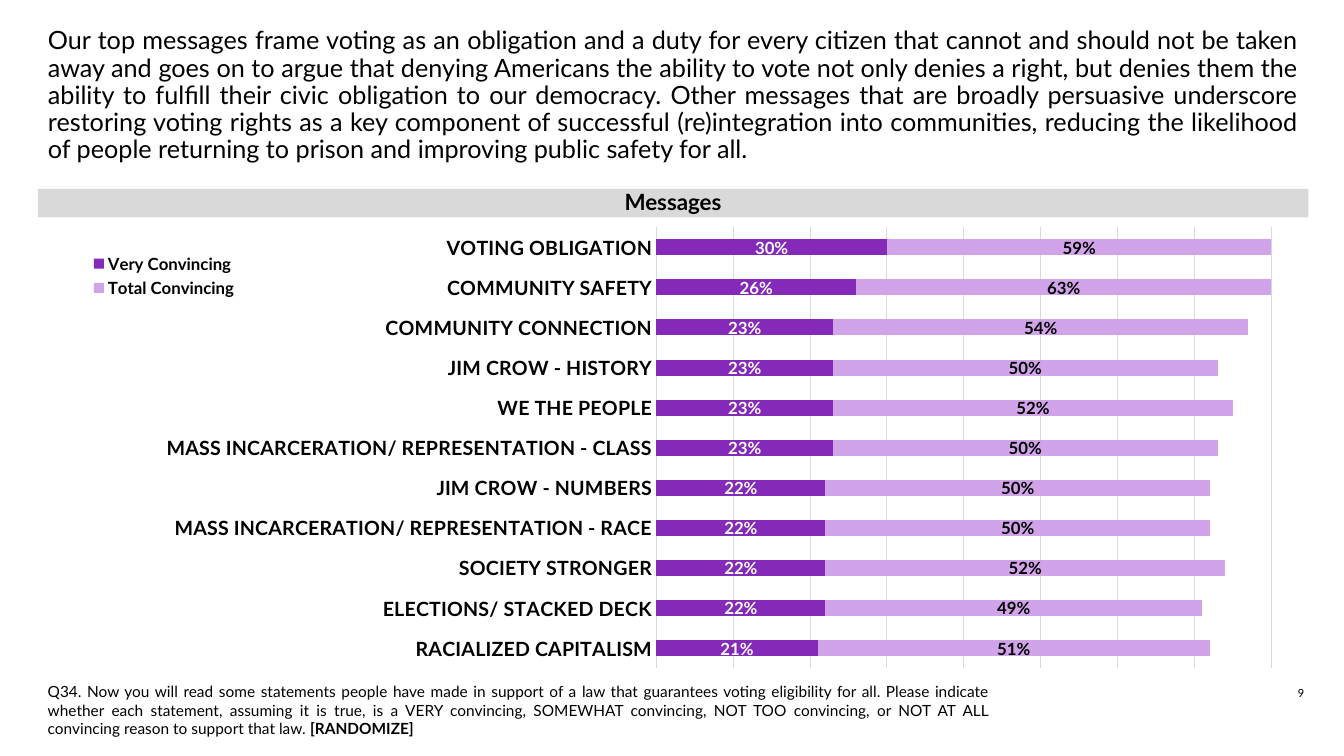
"""Build the slide on the most convincing voting-rights messages."""
from lxml import etree
from pptx import Presentation
from pptx import util as u
from pptx.chart.data import CategoryChartData
from pptx.dml.color import RGBColor
from pptx.enum import chart as ch, shapes, text
from pptx.oxml import parse_xml
from pptx.oxml.ns import nsdecls, qn

PX = 9525
COLORS = {"black": "000000", "white": "FFFFFF", "grey": "D9D9D9",
          "very": "852AB8", "total": "D1A4EA"}
TITLE = (
    "Our top messages frame voting as an obligation and a duty for every citizen "
    "that cannot and should not be taken away and goes on to argue that denying "
    "Americans the ability to vote not only denies a right, but denies them the "
    "ability to fulfill their civic obligation to our democracy. Other messages "
    "that are broadly persuasive underscore restoring voting rights as a key "
    "component of successful (re)integration into communities, reducing the "
    "likelihood of people returning to prison and improving public safety for all.")
QUESTION = (
    "Q34. Now you will read some statements people have made in support of a law "
    "that guarantees voting eligibility for all. Please indicate whether each "
    "statement, assuming it is true, is a VERY convincing, SOMEWHAT convincing, "
    "NOT TOO convincing, or NOT AT ALL convincing reason to support that law. ")
MESSAGES = [
    ("VOTING OBLIGATION", 0.30, 0.59),
    ("COMMUNITY SAFETY", 0.26, 0.63),
    ("COMMUNITY CONNECTION", 0.23, 0.54),
    ("JIM CROW - HISTORY", 0.23, 0.50),
    ("WE THE PEOPLE", 0.23, 0.52),
    ("MASS INCARCERATION/ REPRESENTATION - CLASS", 0.23, 0.50),
    ("JIM CROW - NUMBERS", 0.22, 0.50),
    ("MASS INCARCERATION/ REPRESENTATION - RACE", 0.22, 0.50),
    ("SOCIETY STRONGER", 0.22, 0.52),
    ("ELECTIONS/ STACKED DECK", 0.22, 0.49),
    ("RACIALIZED CAPITALISM", 0.21, 0.51),
]
SERIES = [("Very Convincing", "very", "white", "###0%"),
          ("Total Convincing", "total", "black", "0%")]


def px(*lengths):
    return [u.Emu(n * PX) for n in lengths]


def rgb(name):
    return RGBColor.from_string(COLORS[name])


def apply(obj, values):
    for name, value in values.items():
        setattr(obj, name, value)


def style_font(font, size, bold=False, color="black", name="Lato"):
    apply(font, {"size": u.Pt(size), "bold": bold, "name": name})
    font.color.rgb = rgb(color)


def style_line(line, color):
    line.color.rgb = rgb(color)
    line.width = u.Pt(0.75)


def write(sp, runs, size, align, anchor=text.MSO_ANCHOR.TOP, spacing=1.0, name="Lato"):
    tf = sp.text_frame
    apply(tf, {"word_wrap": True, "auto_size": text.MSO_AUTO_SIZE.NONE,
               "vertical_anchor": anchor})
    p = tf.paragraphs[0]
    apply(p, {"alignment": align, "line_spacing": spacing})
    for content, bold in runs:
        r = p.add_run()
        r.text = content
        style_font(r.font, size, bold, name=name)


def add_title(s, box):
    sp = s.shapes.title
    apply(sp, dict(zip(("left", "top", "width", "height"), px(*box))))
    write(sp, [(TITLE, False)], 18, text.PP_ALIGN.JUSTIFY, text.MSO_ANCHOR.MIDDLE, 0.9)


def add_text(s, box, runs, size, align, name="Lato"):
    write(s.shapes.add_textbox(*px(*box)), runs, size, align, name=name)


def add_band(s, box, label):
    sp = s.shapes.add_shape(shapes.MSO_SHAPE.RECTANGLE, *px(*box))
    sp.shadow.inherit = False
    sp.fill.solid()
    sp.fill.fore_color.rgb = rgb("grey")
    sp.line.fill.background()
    write(sp, [(label, True)], 16, text.PP_ALIGN.CENTER, text.MSO_ANCHOR.MIDDLE, 0.9)


def set_layout(element, x, y, w, h, inner=False):
    for old in element.findall(qn("c:layout")):
        element.remove(old)
    layout = parse_xml(f"<c:layout {nsdecls('c')}><c:manualLayout/></c:layout>")
    fields = [("layoutTarget", "inner")] if inner else []
    fields += [("xMode", "edge"), ("yMode", "edge"), ("x", x), ("y", y), ("w", w), ("h", h)]
    for tag, value in fields:
        etree.SubElement(layout[0], qn(f"c:{tag}")).set("val", str(value))
    if inner:
        element.insert(0, layout)
    else:
        element.find(qn("c:legendPos")).addnext(layout)


def style_axes(chart):
    axis = chart.category_axis
    apply(axis, {"reverse_order": True, "major_tick_mark": ch.XL_TICK_MARK.NONE,
                 "has_major_gridlines": False})
    style_font(axis.tick_labels.font, 14, True)
    style_line(axis.format.line, "grey")
    axis = chart.value_axis
    apply(axis, {"minimum_scale": 0, "maximum_scale": 0.8, "major_unit": 0.1,
                 "has_major_gridlines": True, "visible": False})
    style_line(axis.major_gridlines.format.line, "grey")


def style_series(series, fill, label_color, number_format):
    series.format.fill.solid()
    series.format.fill.fore_color.rgb = rgb(fill)
    labels = series.data_labels
    apply(labels, {"show_value": True, "position": ch.XL_LABEL_POSITION.CENTER,
                   "number_format": number_format, "number_format_is_linked": False})
    style_font(labels.font, 12, True, label_color)


def add_message_chart(s, box):
    names, *columns = zip(*MESSAGES)
    data = CategoryChartData(number_format="0%")
    data.categories = names
    for (name, *_), values in zip(SERIES, columns):
        data.add_series(name, values)
    chart = s.shapes.add_chart(ch.XL_CHART_TYPE.BAR_STACKED, *px(*box), data).chart
    apply(chart, {"has_title": False, "has_legend": True})
    style_font(chart.font, 10, name="Calibri")
    style_axes(chart)
    plot = chart.plots[0]
    apply(plot, {"gap_width": 150, "overlap": 100, "vary_by_categories": False})
    for series, (_, *look) in zip(plot.series, SERIES):
        style_series(series, *look)
    legend = chart.legend
    apply(legend, {"position": ch.XL_LEGEND_POSITION.LEFT, "include_in_layout": False})
    style_font(legend.font, 12, True)
    plot_area = chart.element.find(f".//{qn('c:plotArea')}")
    set_layout(plot_area, 0.487, 0, 0.496, 1, inner=True)
    set_layout(legend.element if hasattr(legend, "element") else legend._element,
               0.02, 0.05, 0.14, 0.12)


def main():
    prs = Presentation()
    prs.slide_width, prs.slide_height = px(1280, 720)
    s = prs.slides.add_slide(prs.slide_layouts[5])
    add_text(s, (1203, 648, 72, 32), [("9", False)], 9, text.PP_ALIGN.CENTER, "Calibri")
    add_message_chart(s, (50, 216, 1181, 421))
    add_band(s, (36, 180, 1210, 27), "Messages")
    add_text(s, (36, 645, 916, 63), [(QUESTION, False), ("[RANDOMIZE]", True)],
             11, text.PP_ALIGN.JUSTIFY)
    add_title(s, (36, 22, 1210, 139))
    prs.save("out.pptx")


if __name__ == "__main__":
    main()
